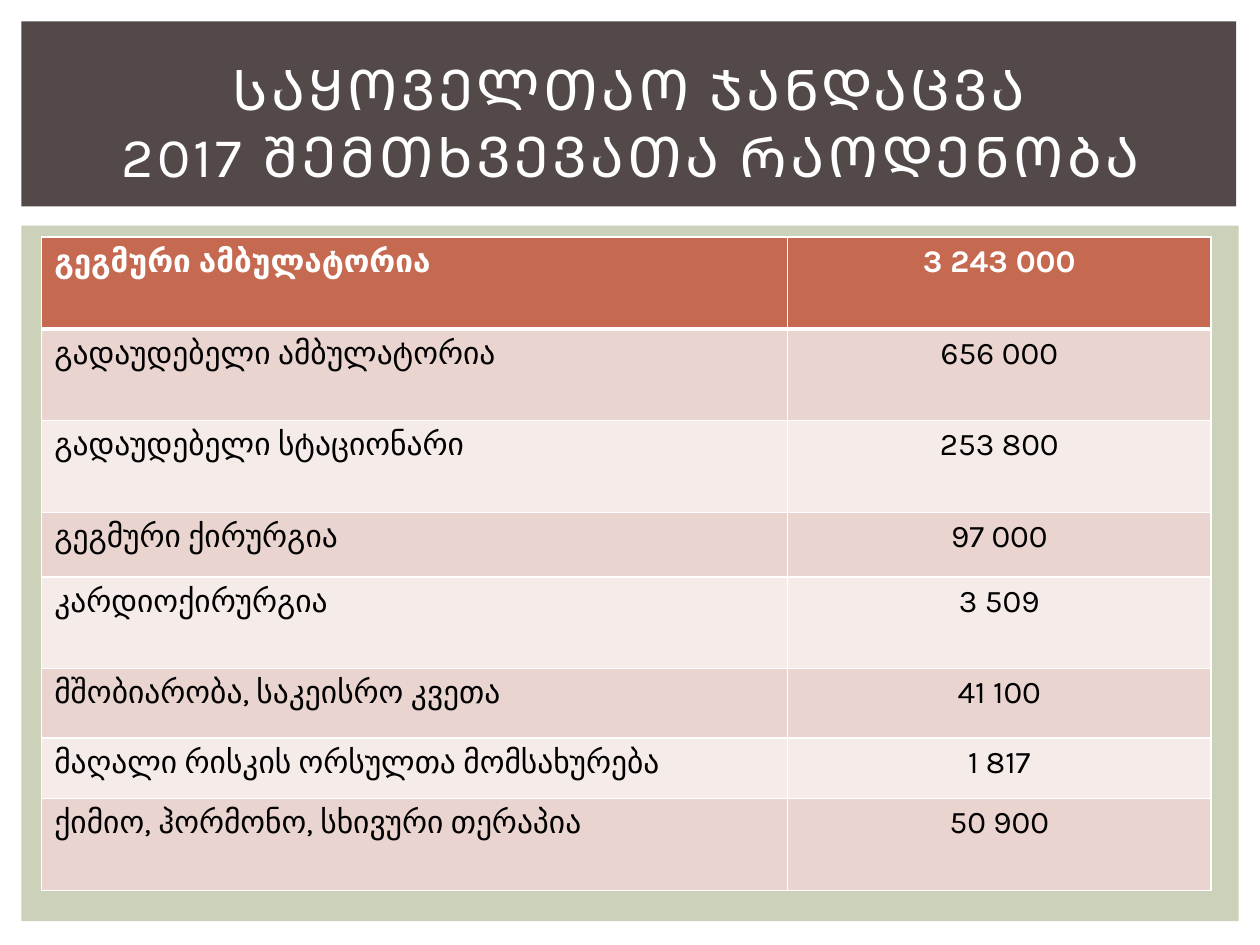
from lxml import etree
from pptx import Presentation
from pptx.dml.color import RGBColor
from pptx.enum.shapes import MSO_SHAPE
from pptx.enum.text import MSO_ANCHOR, PP_ALIGN
from pptx.oxml.ns import qn
from pptx.util import Cm, Pt

RECTANGLE = MSO_SHAPE.RECTANGLE
MIDDLE = MSO_ANCHOR.MIDDLE
LEFT, CENTER = PP_ALIGN.LEFT, PP_ALIGN.CENTER

WHITE = RGBColor(0xFF, 0xFF, 0xFF)
BLACK = RGBColor(0x00, 0x00, 0x00)
SAGE = RGBColor(0xCC, 0xD1, 0xB9)
BROWN = RGBColor(0x53, 0x49, 0x49)
RUST = RGBColor(0xC6, 0x69, 0x51)
PINK = RGBColor(0xEA, 0xD4, 0xD0)
PALE_PINK = RGBColor(0xF5, 0xEB, 0xE9)
FONT = "Karla"

TITLE = "ᲡᲐᲧᲝᲕᲔᲚᲗᲐᲝ ᲯᲐᲜᲓᲐᲪᲕᲐ\n2017 ᲨᲔᲛᲗᲮᲕᲔᲕᲐᲗᲐ ᲠᲐᲝᲓᲔᲜᲝᲑᲐ"
COLUMN_WIDTHS = (15.04, 8.53)
CASES = [  # service, number of cases, row height in cm
    ("გეგმური ამბულატორია", "3 243 000", 1.85),
    ("გადაუდებელი ამბულატორია", "656 000", 1.85),
    ("გადაუდებელი სტაციონარი", "253 800", 1.85),
    ("გეგმური ქირურგია", "97 000", 1.3),
    ("კარდიოქირურგია", "3 509", 1.85),
    ("მშობიარობა, საკეისრო კვეთა", "41 100", 1.4),
    ("მაღალი რისკის ორსულთა მომსახურება", "1 817", 1.22),
    ("ქიმიო, ჰორმონო, სხივური თერაპია", "50 900", 1.85),
]


def style_runs(para, size, color, bold=False):
    for span in para.runs:
        span.font.name = FONT
        span.font.size = Pt(size)
        span.font.color.rgb = color
        span.font.bold = bold


def add_borders(cell, top_width, bottom_width):
    """Draw white lines on all sides of a cell; call before filling it."""
    properties = cell._tc.get_or_add_tcPr()
    widths = {"lnL": 1, "lnR": 1, "lnT": top_width, "lnB": bottom_width}
    for side, width in widths.items():
        line = etree.SubElement(properties, qn(f"a:{side}"), w=str(Pt(width)))
        fill = etree.SubElement(line, qn("a:solidFill"))
        etree.SubElement(fill, qn("a:srgbClr"), val=str(WHITE))


deck = Presentation()
deck.slide_width, deck.slide_height = Cm(25.4), Cm(19.05)
page = deck.slides.add_slide(deck.slide_layouts[6])

# Background panels
for top, width, height, color in [(4.55, 24.54, 14.02, SAGE), (0.43, 24.49, 3.73, BROWN)]:
    panel = page.shapes.add_shape(RECTANGLE, Cm(0.43), Cm(top), Cm(width), Cm(height))
    panel.shadow.inherit = False
    panel.fill.solid()
    panel.fill.fore_color.rgb = color
    panel.line.fill.background()

# Table of cases
total_height = sum(height for _, _, height in CASES)
frame = page.shapes.add_table(len(CASES), len(COLUMN_WIDTHS), Cm(0.84), Cm(4.78),
                              Cm(sum(COLUMN_WIDTHS)), Cm(total_height))
table = frame.table
for column, width in zip(table.columns, COLUMN_WIDTHS):
    column.width = Cm(width)

for row_index, (service, count, height) in enumerate(CASES):
    table.rows[row_index].height = Cm(height)
    is_header = row_index == 0
    if is_header:
        row_color = RUST
    else:
        row_color = PINK if row_index % 2 else PALE_PINK
    for column_index, (text, alignment) in enumerate([(service, LEFT), (count, CENTER)]):
        cell = table.cell(row_index, column_index)
        add_borders(cell, 3 if row_index == 1 else 1, 3 if is_header else 1)
        cell.fill.solid()
        cell.fill.fore_color.rgb = row_color
        para = cell.text_frame.paragraphs[0]
        para.text = text
        para.alignment = alignment
        style_runs(para, 18, WHITE if is_header else BLACK, is_header)

# Title
title_box = page.shapes.add_textbox(Cm(1.07), Cm(0.99), Cm(23.29), Cm(2.92))
title_box.text_frame.word_wrap = True
title_box.text_frame.vertical_anchor = MIDDLE
para = title_box.text_frame.paragraphs[0]
para.text = TITLE
para.alignment = CENTER
style_runs(para, 32, WHITE)
for span in para.runs:
    span.font._element.set("spc", "200")

deck.save("out.pptx")
